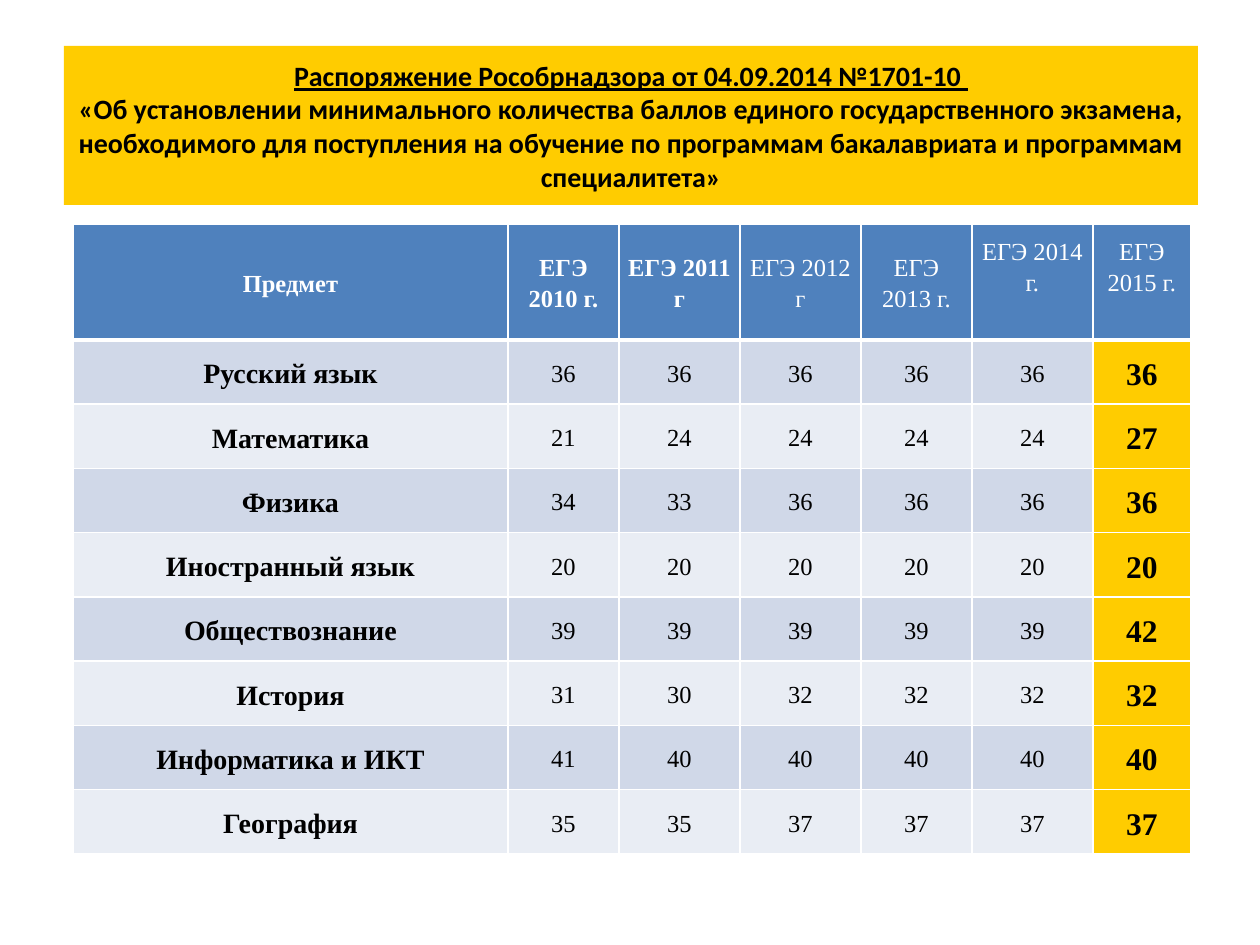
from lxml.etree import SubElement
from pptx import Presentation
from pptx.dml.color import RGBColor
from pptx.enum.text import MSO_ANCHOR, MSO_AUTO_SIZE, PP_ALIGN
from pptx.oxml.ns import qn
from pptx.util import Pt

EMU_PER_PX = 914400 // 126


class Theme:
    gold = RGBColor.from_string("FFCC00")
    blue = RGBColor.from_string("4F81BD")
    bands = [RGBColor.from_string("D0D8E8"), RGBColor.from_string("E9EDF4")]
    black = RGBColor.from_string("000000")
    white = RGBColor.from_string("FFFFFF")
    title_font, table_font = "Calibri", "Times New Roman"
    title_size, subject_size, score_size, latest_size = Pt(16), Pt(16), Pt(14), Pt(18)
    thin, thick = Pt(1), Pt(3)


def px(length):
    return length * EMU_PER_PX


def set_borders(cell, bottom_width):
    properties = cell._tc.get_or_add_tcPr()
    widths = {"lnL": Theme.thin, "lnR": Theme.thin, "lnT": Theme.thin, "lnB": bottom_width}
    for position, (tag, width) in enumerate(widths.items()):
        line = SubElement(properties, qn(f"a:{tag}"), w=str(width))
        fill = SubElement(line, qn("a:solidFill"))
        SubElement(fill, qn("a:srgbClr"), val=str(Theme.white))
        properties.insert(position, line)  # borders come before the cell fill


presentation = Presentation()
presentation.slide_width, presentation.slide_height = px(1260), px(945)
slide = presentation.slides.add_slide(presentation.slide_layouts[5])

# Title banner
title = slide.shapes.title
title.left, title.top, title.width, title.height = px(64), px(46), px(1134), px(159)
title.fill.solid()
title.fill.fore_color.rgb = Theme.gold
title.text_frame.word_wrap = True
title.text_frame.auto_size = MSO_AUTO_SIZE.NONE
title.text_frame.vertical_anchor = MSO_ANCHOR.MIDDLE
paragraph = title.text_frame.paragraphs[0]
paragraph.alignment = PP_ALIGN.CENTER
order = paragraph.add_run()
order.text = "Распоряжение Рособрнадзора от 04.09.2014 №1701-10 "
order.font.underline = True
paragraph.add_line_break()
subject = paragraph.add_run()
subject.text = (
    "«Об установлении минимального количества баллов единого государственного экзамена, "
    "необходимого для поступления на обучение по программам бакалавриата "
    "и программам специалитета»"
)
paragraph.font.name = Theme.title_font
paragraph.font.size = Theme.title_size
paragraph.font.bold = True
paragraph.font.color.rgb = Theme.black

# Minimum scores by subject and year
rows = [
    ("Предмет", "ЕГЭ 2010 г.", "ЕГЭ 2011 г", "ЕГЭ 2012 г", "ЕГЭ 2013 г.", "ЕГЭ 2014 г.", "ЕГЭ 2015 г."),
    ("Русский язык", 36, 36, 36, 36, 36, 36),
    ("Математика", 21, 24, 24, 24, 24, 27),
    ("Физика", 34, 33, 36, 36, 36, 36),
    ("Иностранный язык", 20, 20, 20, 20, 20, 20),
    ("Обществознание", 39, 39, 39, 39, 39, 42),
    ("История", 31, 30, 32, 32, 32, 32),
    ("Информатика и ИКТ", 41, 40, 40, 40, 40, 40),
    ("География", 35, 35, 37, 37, 37, 37),
]
column_widths = [435, 111, 121, 121, 111, 121, 98]
header_height, body_height = 116, 514
last_column = len(column_widths) - 1

table = slide.shapes.add_table(
    len(rows), len(column_widths), px(73), px(224),
    px(sum(column_widths)), px(header_height + body_height),
).table
for column, width in zip(table.columns, column_widths):
    column.width = px(width)
for row in table.rows:
    row.height = px(body_height) // (len(rows) - 1)
table.rows[0].height = px(header_height)

for row_index, values in enumerate(rows):
    for column_index, value in enumerate(values):
        # Header, subject, latest year and earlier years each have a style
        if row_index == 0:
            fill, color, size = Theme.blue, Theme.white, Theme.score_size
            bold = column_index < 3
        else:
            fill, color = Theme.bands[(row_index - 1) % 2], Theme.black
            size, bold = Theme.score_size, False
            if column_index == 0:
                size, bold = Theme.subject_size, True
            elif column_index == last_column:
                fill, size, bold = Theme.gold, Theme.latest_size, True

        cell = table.cell(row_index, column_index)
        cell.fill.solid()
        cell.fill.fore_color.rgb = fill
        set_borders(cell, Theme.thin if row_index else Theme.thick)
        cell.vertical_anchor = MSO_ANCHOR.MIDDLE
        cell.margin_left = cell.margin_right = px(9)
        # The two latest year headings sit a little higher
        raised = row_index == 0 and column_index >= last_column - 1
        cell.margin_top, cell.margin_bottom = 0, px(32 if raised else 0)

        cell.text = str(value)
        paragraph = cell.text_frame.paragraphs[0]
        paragraph.alignment = PP_ALIGN.CENTER
        paragraph.line_spacing = 1.15
        paragraph.font.name = Theme.table_font
        paragraph.font.size = size
        paragraph.font.bold = bold
        paragraph.font.color.rgb = color

presentation.save("out.pptx")
